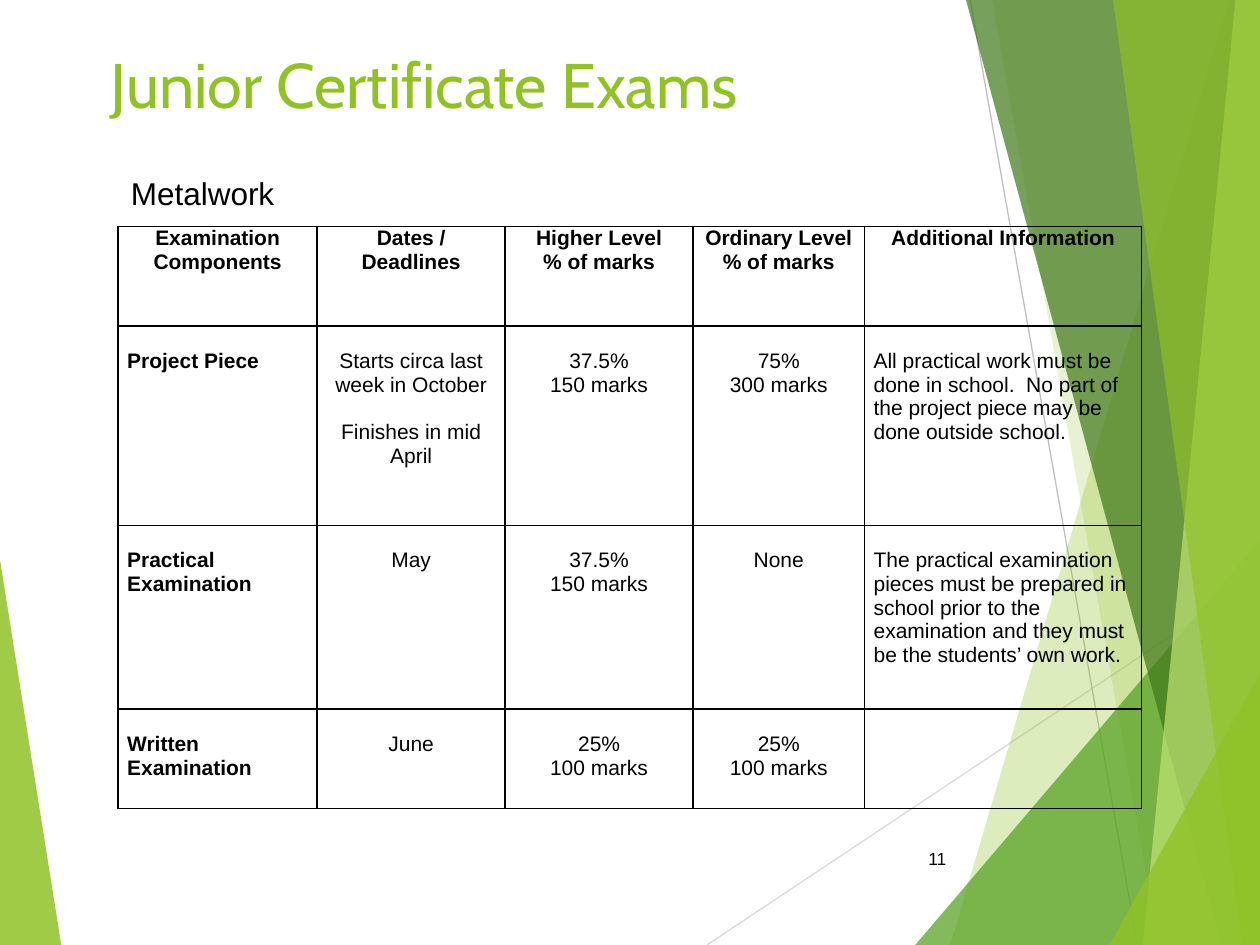
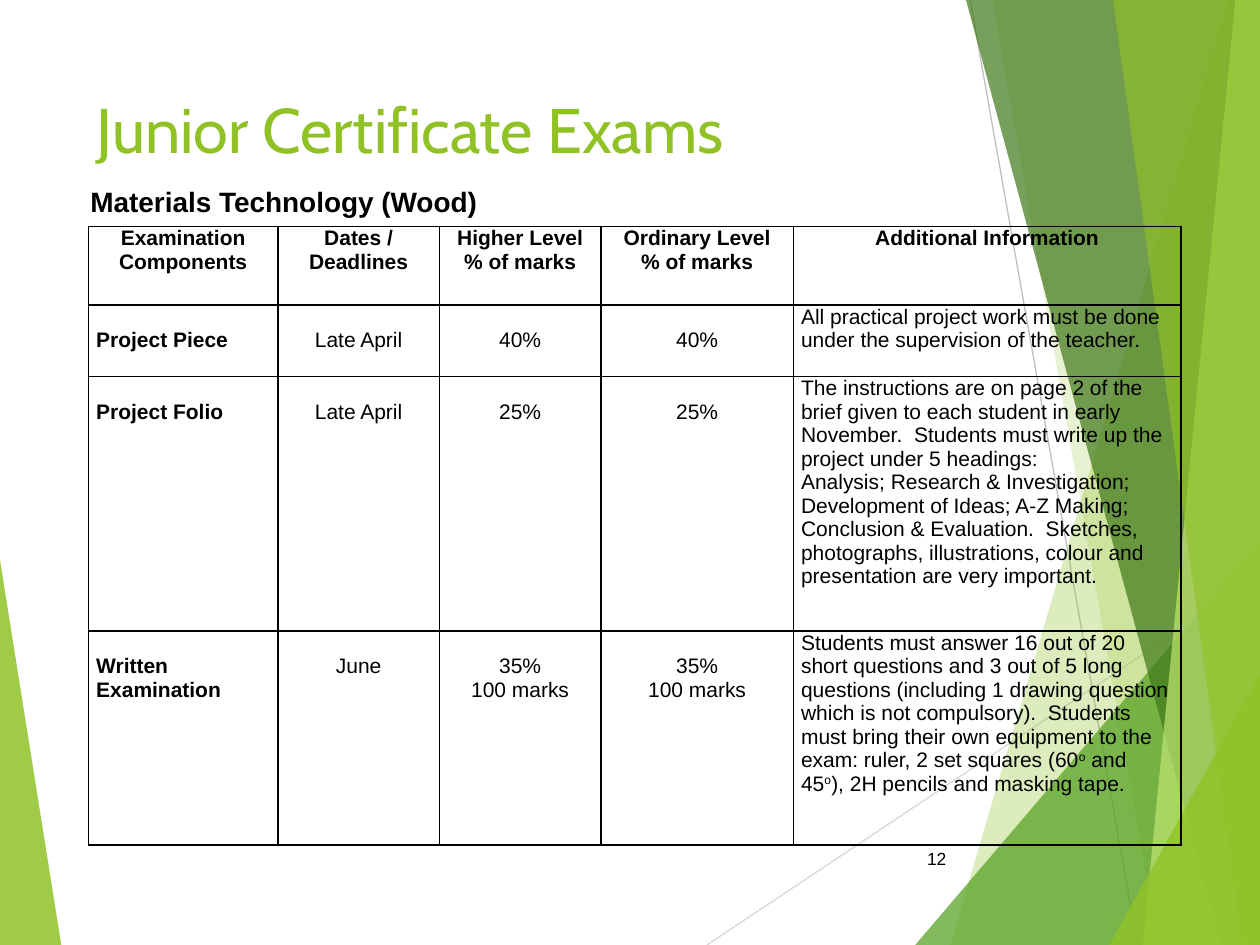
from dataclasses import dataclass

from lxml import etree
from pptx import Presentation
from pptx import util as u
from pptx.dml.color import RGBColor
from pptx.enum import shapes, text
from pptx.oxml.ns import qn

Pt = u.Pt
WIDTH, HEIGHT = 720, 540
LEFT, CENTER, RIGHT = text.PP_ALIGN.LEFT, text.PP_ALIGN.CENTER, text.PP_ALIGN.RIGHT


@dataclass(frozen=True)
class Theme:
    green: str = "90C226"
    leaf: str = "54A021"
    forest: str = "3F7819"
    lime: str = "C0E474"
    ink: str = "000000"
    pale_line: str = "D9D9D9"
    grey_line: str = "BFBFBF"
    title_font: str = "Cabin"
    body_font: str = "Arial"
    title_size: float = 36
    cell_size: float = 12
    number_size: float = 10
    blank_line: float = 13.5


THEME = Theme()

# Backdrop: top or right-edge start, foot on the bottom edge, colour, opacity
BANDS = [
    ((702, 0), 543, THEME.green, 30),
    ((567, 0), 662, THEME.green, 20),
    ((WIDTH, 309), 523, THEME.leaf, 72),
    ((552, 0), 698, THEME.forest, 70),
    ((706, 0), 653, THEME.lime, 70),
    ((636, 0), 710, THEME.green, 65),
    ((WIDTH, 385), 634, THEME.green, 80),
]

HEADER = ["Examination\nComponents", "Dates /\nDeadlines", "Higher Level\n% of marks",
          "Ordinary Level\n% of marks", "Additional Information"]

METALWORK = [
    ["Project Piece", "Starts circa last week in October\n\nFinishes in mid April",
     "37.5%\n150 marks", "75%\n300 marks",
     "All practical work must be done in school.  No part of the project piece "
     "may be done outside school."],
    ["Practical Examination", "May", "37.5%\n150 marks", "None",
     "The practical examination pieces must be prepared in school prior to the "
     "examination and they must be the students’ own work."],
    ["Written Examination", "June", "25%\n100 marks", "25%\n100 marks", ""],
]

# Text between two carets is raised
WOOD = [
    ["Project Piece", "Late April", "40%", "40%",
     "All practical project work must be done under the supervision of the teacher."],
    ["Project Folio", "Late April", "25%", "25%",
     "The instructions are on page 2 of the brief given to each student in early "
     "November.  Students must write up the project under 5 headings:\n"
     "Analysis; Research & Investigation; Development of Ideas; A-Z Making; "
     "Conclusion & Evaluation.  Sketches, photographs, illustrations, colour and "
     "presentation are very important."],
    ["Written Examination", "June", "35%\n100 marks", "35%\n100 marks",
     "Students must answer 16 out of 20 short questions and 3 out of 5 long "
     "questions (including 1 drawing question which is not compulsory).  Students "
     "must bring their own equipment to the exam: ruler, 2 set squares (60^o^ and "
     "45^o^), 2H pencils and masking tape."],
]


def write(frame, content, *, size, font=THEME.body_font, color=THEME.ink,
          bold=False, align=LEFT):
    """One paragraph a line; an empty line becomes space before the next one."""
    para, gap = None, 0
    for line in content.split("\n"):
        if not line:
            gap = THEME.blank_line
            continue
        para = frame.add_paragraph() if para is not None else frame.paragraphs[0]
        para.alignment = align
        para.space_before, gap = Pt(gap), 0
        for index, piece in enumerate(line.split("^")):
            span = para.add_run()
            span.text = piece
            span.font.name, span.font.size, span.font.bold = font, Pt(size), bold
            span.font.color.rgb = RGBColor.from_string(color)
            if index % 2:
                span._r.get_or_add_rPr().set("baseline", "30000")


class ExamDeck:
    def __init__(self, theme):
        self.theme = theme
        self.deck = Presentation()
        self.deck.slide_width, self.deck.slide_height = Pt(WIDTH), Pt(HEIGHT)
        self.page = None

    def add_page(self):
        self.page = self.deck.slides.add_slide(self.deck.slide_layouts[6])
        self.backdrop()

    def polygon(self, points, color, opacity):
        points = [(Pt(x), Pt(y)) for x, y in points]
        builder = self.page.shapes.build_freeform(*points[0], scale=1.0)
        builder.add_line_segments(points[1:], close=True)
        shape = builder.convert_to_shape()
        shape.shadow.inherit = False
        shape.fill.solid()
        shape.fill.fore_color.rgb = RGBColor.from_string(color)
        shape.line.fill.background()
        tint = shape._element.spPr.find(qn("a:solidFill"))[0]
        etree.SubElement(tint, qn("a:alpha")).set("val", str(opacity * 1000))

    def line(self, start, end, color):
        line = self.page.shapes.add_connector(
            shapes.MSO_CONNECTOR.STRAIGHT, *map(Pt, start + end))
        line.line.color.rgb = RGBColor.from_string(color)
        line.line.width = Pt(0.75)
        etree.SubElement(line._element.spPr, qn("a:effectLst"))

    def backdrop(self):
        self.polygon([(0, 320), (35, HEIGHT), (0, HEIGHT)], self.theme.green, 85)
        self.line((404, HEIGHT), (WIDTH, 329.5), self.theme.pale_line)
        self.line((554.4, 0), (650, HEIGHT), self.theme.grey_line)
        for start, foot, color, opacity in BANDS:
            corners = [start, (foot, HEIGHT), (WIDTH, HEIGHT)]
            if start[1] == 0:
                corners.append((WIDTH, 0))
            self.polygon(corners, color, opacity)

    def text_box(self, area, content, anchor=text.MSO_ANCHOR.MIDDLE, **style):
        frame = self.page.shapes.add_textbox(*map(Pt, area)).text_frame
        frame.word_wrap = True
        frame.vertical_anchor = anchor
        write(frame, content, **style)

    def title(self, area, content):
        self.text_box(area, content, text.MSO_ANCHOR.TOP, font=self.theme.title_font,
                      size=self.theme.title_size, color=self.theme.green)

    def page_number(self, number):
        self.text_box((507.6, 476, 40.3, 28.8), str(number),
                      size=self.theme.number_size, align=RIGHT)

    def borders(self, cell):
        properties = cell._tc.get_or_add_tcPr()
        for index, side in enumerate(("lnL", "lnR", "lnT", "lnB")):
            edge = etree.Element(qn(f"a:{side}"), w=str(Pt(1)))
            fill = etree.SubElement(edge, qn("a:solidFill"))
            etree.SubElement(fill, qn("a:srgbClr")).set("val", self.theme.ink)
            properties.insert(index, edge)

    def table(self, left, top, widths, heights, rows, inset, lead_columns):
        """Cells in the first lead_columns start one line down, below the header."""
        table = self.page.shapes.add_table(
            len(heights), len(widths), Pt(left), Pt(top),
            Pt(sum(widths)), Pt(sum(heights))).table
        table.first_row = table.horz_banding = False
        for column, width in zip(table.columns, widths):
            column.width = Pt(width)
        for row, height in zip(table.rows, heights):
            row.height = Pt(height)
        for r, row in enumerate([HEADER] + rows):
            for c, content in enumerate(row):
                cell = table.cell(r, c)
                cell.fill.background()
                self.borders(cell)
                cell.margin_left = cell.margin_right = Pt(inset)
                cell.margin_bottom = 0
                lead = r > 0 and c < lead_columns
                cell.margin_top = Pt(self.theme.blank_line if lead else 0)
                centered = r == 0 or 0 < c < len(row) - 1
                write(cell.text_frame, content, size=self.theme.cell_size,
                      bold=r == 0 or c == 0, align=CENTER if centered else LEFT)


def main():
    exams = ExamDeck(THEME)

    # Metalwork
    exams.add_page()
    exams.title((56.2, 22.3, 648, 90), "Junior Certificate Exams")
    exams.page_number(11)
    exams.table(67.5, 129.4, [113.8, 107.4, 107.4, 98, 158.4], [57, 113.8, 105, 57],
                METALWORK, inset=5.2, lead_columns=5)
    exams.text_box((67.7, 95.8, 118, 28.8), "Metalwork", size=18)

    # Materials Technology (Wood)
    exams.add_page()
    exams.title((48.2, 48.2, 500, 103.7), "Junior Certificate Exams")
    exams.page_number(12)
    exams.table(50.6, 129.4, [108.2, 92.3, 92.3, 110, 221.4], [45, 40.8, 145.4, 122.3],
                WOOD, inset=4.4, lead_columns=4)
    exams.text_box((44.6, 101.5, 258.5, 26.6), "Materials Technology (Wood)",
                   size=16, bold=True)

    exams.deck.save("out.pptx")


if __name__ == "__main__":
    main()
